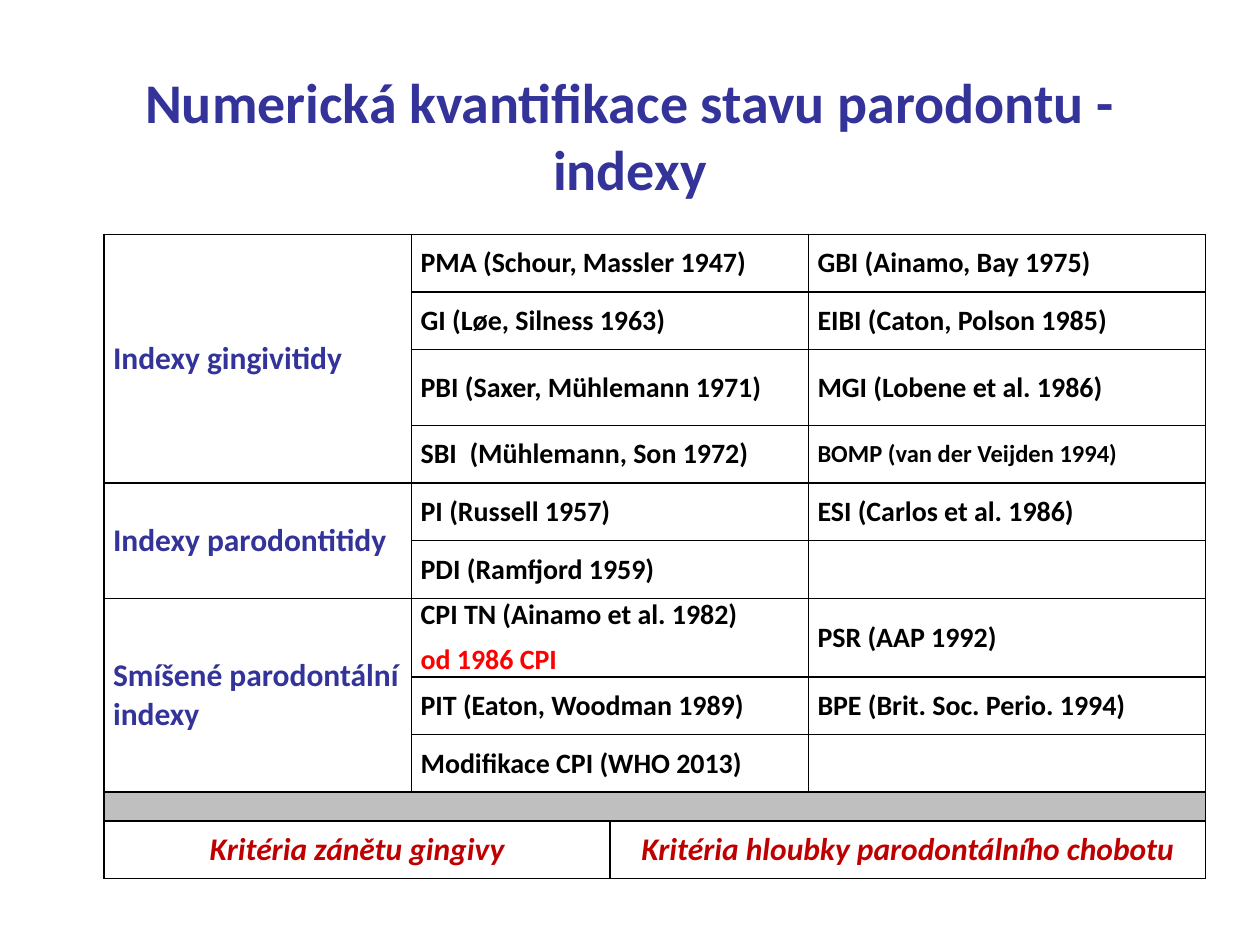
from lxml.etree import SubElement
from pptx import Presentation
from pptx.dml.color import RGBColor
from pptx.enum.text import MSO_ANCHOR, PP_ALIGN
from pptx.oxml.ns import qn
from pptx.util import Cm, Pt

MIDDLE = MSO_ANCHOR.MIDDLE
LEFT, CENTER = PP_ALIGN.LEFT, PP_ALIGN.CENTER
BLUE = RGBColor(0x33, 0x33, 0x99)
BLACK = RGBColor(0, 0, 0)
RED = RGBColor(0xFF, 0, 0)
DARK_RED = RGBColor(0xC0, 0, 0)
GRAY = RGBColor(0xBF, 0xBF, 0xBF)
FONT = "Calibri"

COLS = [6.2, 4, 4, 8]
ROWS = [1.16, 1.16, 1.53, 1.16, 1.16, 1.16, 1.59, 1.16, 1.16, 0.58, 1.16]
GROUPS = [
    ("Indexy gingivitidy", [
        ("PMA (Schour, Massler 1947)", "GBI (Ainamo, Bay 1975)"),
        ("GI (Løe, Silness 1963)", "EIBI (Caton, Polson 1985)"),
        ("PBI (Saxer, Mühlemann 1971)", "MGI (Lobene et al. 1986)"),
        ("SBI  (Mühlemann, Son 1972)", "BOMP (van der Veijden 1994)"),
    ]),
    ("Indexy parodontitidy", [
        ("PI (Russell 1957)", "ESI (Carlos et al. 1986)"),
        ("PDI (Ramfjord 1959)", ""),
    ]),
    ("Smíšené parodontální indexy", [
        ("CPI TN (Ainamo et al. 1982)\nod 1986 CPI", "PSR (AAP 1992)"),
        ("PIT (Eaton, Woodman 1989)", "BPE (Brit. Soc. Perio. 1994)"),
        ("Modifikace CPI (WHO 2013)", ""),
    ]),
]
CRITERIA = ["Kritéria zánětu gingivy", "Kritéria hloubky parodontálního chobotu"]


def style(para, size, color, italic=False, align=LEFT):
    """Format a paragraph and its runs in bold."""
    para.alignment = align
    for run in para.runs:
        font = run.font
        font.name, font.size, font.bold = FONT, Pt(size), True
        font.italic = italic
        font.color.rgb = color


def write(cell, text, size=16, color=BLACK, italic=False, align=LEFT):
    """Fill a cell with formatted text."""
    cell.text_frame.text = text
    for i, para in enumerate(cell.text_frame.paragraphs):
        if i:
            para.space_before = Pt(6)
        style(para, size, color, italic, align)


def frame(cell):
    """Give a cell its margins, thin black borders and no fill."""
    cell.margin_left = cell.margin_right = Cm(0.18)
    cell.margin_top = cell.margin_bottom = 0
    cell.vertical_anchor = MIDDLE
    props = cell._tc.get_or_add_tcPr()
    for side in ("a:lnL", "a:lnR", "a:lnT", "a:lnB"):
        line = SubElement(props, qn(side), w=str(Pt(1)))
        fill = SubElement(line, qn("a:solidFill"))
        SubElement(fill, qn("a:srgbClr"), val=str(BLACK))
    cell.fill.background()


def add_title(slide, text):
    """Add the centred slide title."""
    box = slide.shapes.add_textbox(Cm(1.9), Cm(1.12), Cm(21.6), Cm(3.18))
    box.text_frame.word_wrap = True
    box.text_frame.vertical_anchor = MIDDLE
    box.text_frame.text = text
    style(box.text_frame.paragraphs[0], 32, BLUE, align=CENTER)


def add_grid(slide):
    """Add the empty bordered table."""
    table = slide.shapes.add_table(
        len(ROWS), len(COLS), Cm(2.1), Cm(4.73), Cm(sum(COLS)), Cm(sum(ROWS))
    ).table
    table.first_row = table.horz_banding = False
    for col, width in zip(table.columns, COLS):
        col.width = Cm(width)
    for row, height in zip(table.rows, ROWS):
        row.height = Cm(height)
    for cell in table.iter_cells():
        frame(cell)
    return table


def fill_groups(table):
    """Write the index groups and return the next free row."""
    top = 0
    for name, pairs in GROUPS:
        end = top + len(pairs)
        table.cell(top, 0).merge(table.cell(end - 1, 0))
        write(table.cell(top, 0), name, 18, BLUE)
        for row, (first, second) in enumerate(pairs, top):
            table.cell(row, 1).merge(table.cell(row, 2))
            write(table.cell(row, 1), first)
            write(table.cell(row, 3), second, 14 if "BOMP" in second else 16)
            for para in table.cell(row, 1).text_frame.paragraphs[1:]:
                style(para, 16, RED)
        top = end
    return top


def fill_foot(table, row):
    """Add the gray band and the criteria below it."""
    band = table.cell(row, 0)
    band.merge(table.cell(row, 3))
    for col in range(len(COLS)):
        cell = table.cell(row, col)
        cell.fill.solid()
        cell.fill.fore_color.rgb = GRAY
        SubElement(cell.text_frame.paragraphs[0]._p, qn("a:endParaRPr"), sz="1000")
    for col, text in zip((0, 2), CRITERIA):
        cell = table.cell(row + 1, col)
        cell.merge(table.cell(row + 1, col + 1))
        write(cell, text, 18, DARK_RED, True, CENTER)


def main():
    """Build and save the slide."""
    deck = Presentation()
    deck.slide_width, deck.slide_height = Cm(25.4), Cm(19.05)
    slide = deck.slides.add_slide(deck.slide_layouts[6])
    add_title(slide, "Numerická kvantifikace stavu parodontu - indexy")
    table = add_grid(slide)
    fill_foot(table, fill_groups(table))
    deck.save("out.pptx")


if __name__ == "__main__":
    main()
